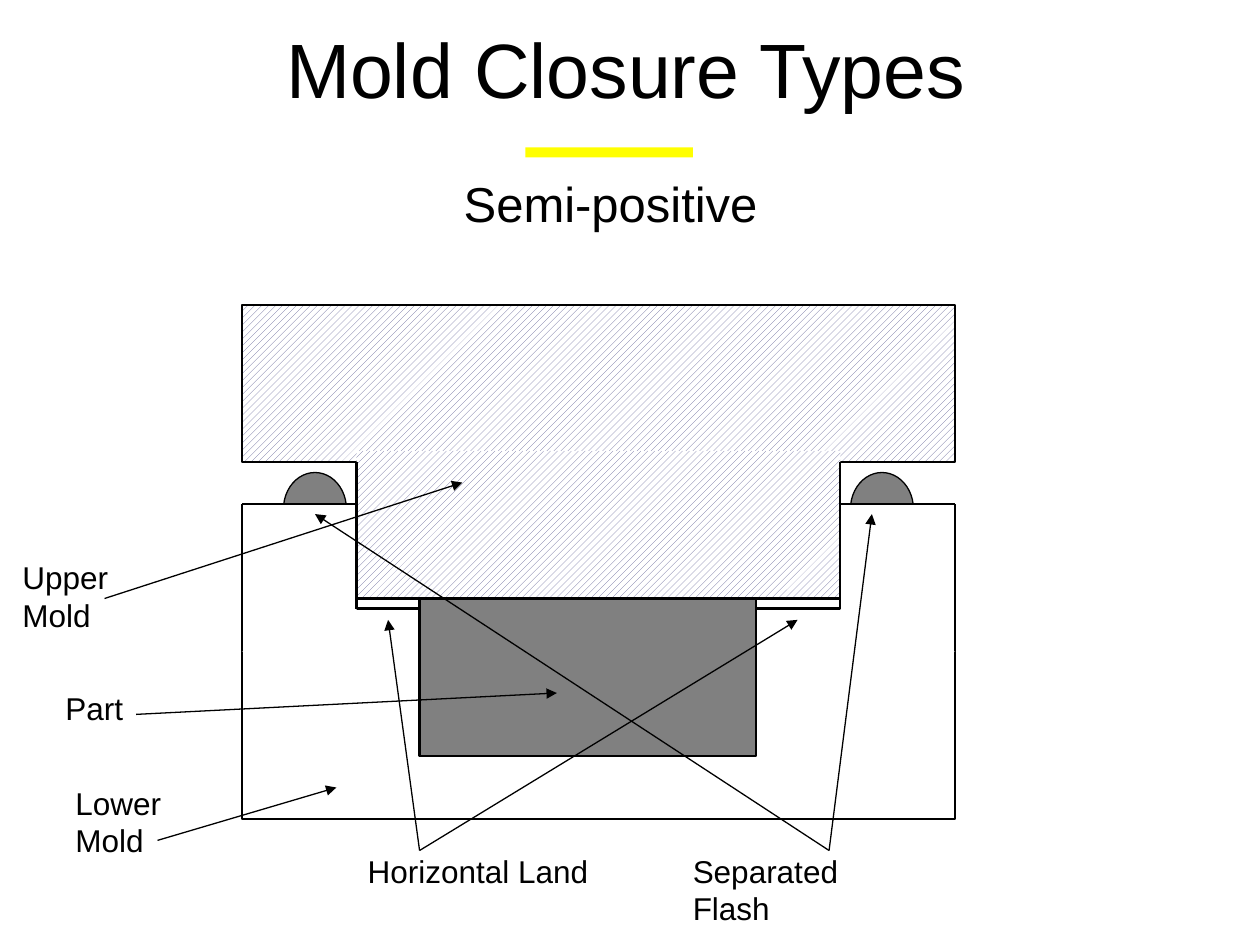
from pptx import Presentation
from pptx.dml.color import RGBColor
from pptx.enum.dml import MSO_PATTERN
from pptx.enum.shapes import MSO_CONNECTOR, MSO_SHAPE
from pptx.enum.text import MSO_ANCHOR, MSO_AUTO_SIZE, PP_ALIGN
from pptx.oxml.ns import qn
from pptx.util import Inches, Pt
from lxml import etree

COLORS = {"ink": "000000", "paper": "FFFFFF", "gray": "808080",
          "hatch": "666699", "accent": "FFFF00"}
FONT = "Arial"
THICK, THIN = 1.25, 0.75

# Levels of the mold cross-section, in inches
LEFT, RIGHT = 1.92, 7.58            # outer walls
CORE_LEFT, CORE_RIGHT = 2.83, 6.67  # walls of the upper mold's plunger
TOP, SHOULDER, RIM, CORE_BOTTOM, LAND, BASE = 2.42, 3.67, 4, 4.75, 4.83, 6.5
SIDE_BOTTOM = 5.17

# Labels: lines, left, top, width, height
LABELS = [
    (["Part"], 0.42, 5.42, 0.66, 0.4),
    (["Upper", "Mold"], 0.08, 4.38, 0.95, 0.7),
    (["Lower", "Mold"], 0.5, 6.17, 0.88, 0.7),
    (["Horizontal Land"], 2.82, 6.71, 1.95, 0.4),
    (["Separated Flash"], 5.4, 6.71, 2.03, 0.4),
]
# Arrows: start, list of targets
ARROWS = [
    ((0.83, 4.75), [(3.67, 3.83)]),
    ((1.25, 6.67), [(2.67, 6.25)]),
    ((1.08, 5.67), [(4.42, 5.5)]),
    ((3.33, 6.75), [(3.08, 4.92), (6.33, 4.92)]),
    ((6.58, 6.75), [(6.92, 4.08), (2.5, 4.08)]),
]

presentation = Presentation()
presentation.slide_width, presentation.slide_height = Inches(10), Inches(7.5)
slide = presentation.slides.add_slide(presentation.slide_layouts[1])


def color(name):
    return RGBColor.from_string(COLORS[name])


def place(shape, left, top, width, height):
    shape.left, shape.top = Inches(left), Inches(top)
    shape.width, shape.height = Inches(width), Inches(height)


def add_block(left, top, right, bottom, fill, outline=None, kind=MSO_SHAPE.RECTANGLE):
    shape = slide.shapes.add_shape(kind, Inches(left), Inches(top),
                                   Inches(right - left), Inches(bottom - top))
    shape.shadow.inherit = False
    if fill == "hatch":
        shape.fill.patterned()
        shape.fill.pattern = MSO_PATTERN.WIDE_UPWARD_DIAGONAL
        shape.fill.fore_color.rgb = color("hatch")
        shape.fill.back_color.rgb = color("paper")
    else:
        shape.fill.solid()
        shape.fill.fore_color.rgb = color(fill)
    if outline:
        shape.line.color.rgb = color("ink")
        shape.line.width = Pt(outline)
    else:
        shape.line.fill.background()


def add_line(start, end, width=THICK, arrow=False):
    line = slide.shapes.add_connector(MSO_CONNECTOR.STRAIGHT,
                                      *map(Inches, start + end))
    line.line.color.rgb = color("ink")
    line.line.width = Pt(width)
    if arrow:
        etree.SubElement(line.line._get_or_add_ln(), qn("a:tailEnd"), type="triangle")
    etree.SubElement(line._element.spPr, qn("a:effectLst"))


def add_text(paragraph, text, size):
    run = paragraph.add_run()
    run.text = text
    run.font.size, run.font.name = Pt(size), FONT
    run.font.color.rgb = color("ink")
    paragraph.alignment = PP_ALIGN.LEFT


# Title and subtitle
title, body = slide.shapes.title, slide.placeholders[1]
place(title, 2.17, 0, 7.25, 1.08)
title.text_frame.vertical_anchor = MSO_ANCHOR.MIDDLE
add_text(title.text_frame.paragraphs[0], "Mold Closure Types", 44)

place(body, 3.08, 1.33, 3.25, 0.92)
subtitle = body.text_frame.paragraphs[0]
subtitle.level = 1
subtitle.space_before = Pt(0)
properties = subtitle._p.get_or_add_pPr()
properties.set("marL", str(Inches(0.81)))
properties.set("indent", str(Inches(-0.31)))
etree.SubElement(properties, qn("a:buNone"))
add_text(subtitle, "Semi-positive", 28)
for placeholder in (title, body):
    placeholder.text_frame.auto_size = MSO_AUTO_SIZE.NONE

# Accent bar
add_block(4.17, 1.17, 5.5, 1.25, "accent")

# Separated flash: the lower mold hides the lower half of each ellipse
for left in (6.75, 2.25):
    add_block(left, 3.75, left + 0.5, 4.33, "gray", THIN, MSO_SHAPE.OVAL)

# Upper mold: the plunger covers the shoulder line between its walls
add_block(LEFT, TOP, RIGHT, SHOULDER, "hatch", THICK)
add_block(CORE_LEFT, 3.58, CORE_RIGHT, CORE_BOTTOM, "hatch")
add_line((CORE_LEFT, CORE_BOTTOM), (CORE_RIGHT, CORE_BOTTOM))

# Lower mold: base, then the two raised sides
add_block(LEFT, LAND, RIGHT, BASE, "paper", THICK)
for outer, inner in ((LEFT, CORE_LEFT), (RIGHT, CORE_RIGHT)):
    add_block(min(outer, inner), RIM, max(outer, inner), SIDE_BOTTOM, "paper")
    add_line((inner, SHOULDER), (inner, LAND))
    add_line((inner, RIM), (outer, RIM))
    add_line((outer, RIM), (outer, SIDE_BOTTOM))

# Part
add_block(3.33, CORE_BOTTOM, 6, 6, "gray", THICK)

# Labels and arrows
for lines, *box in LABELS:
    frame = slide.shapes.add_textbox(*map(Inches, box)).text_frame
    frame.word_wrap = False
    frame.auto_size = MSO_AUTO_SIZE.SHAPE_TO_FIT_TEXT
    for number, text in enumerate(lines):
        paragraph = frame.add_paragraph() if number else frame.paragraphs[0]
        add_text(paragraph, text, 18)

for start, targets in ARROWS:
    for target in targets:
        add_line(start, target, THIN, arrow=True)

presentation.save("out.pptx")
